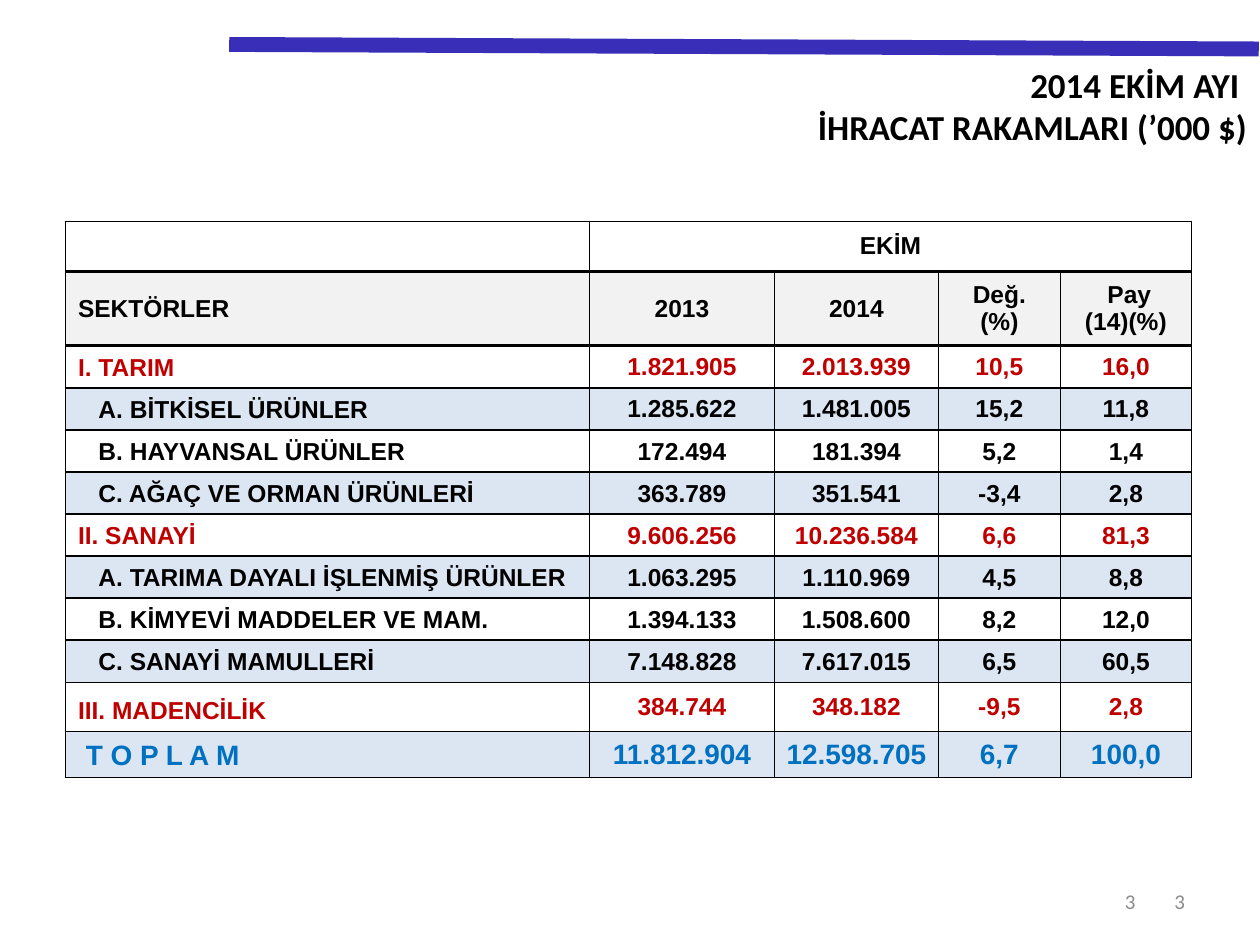
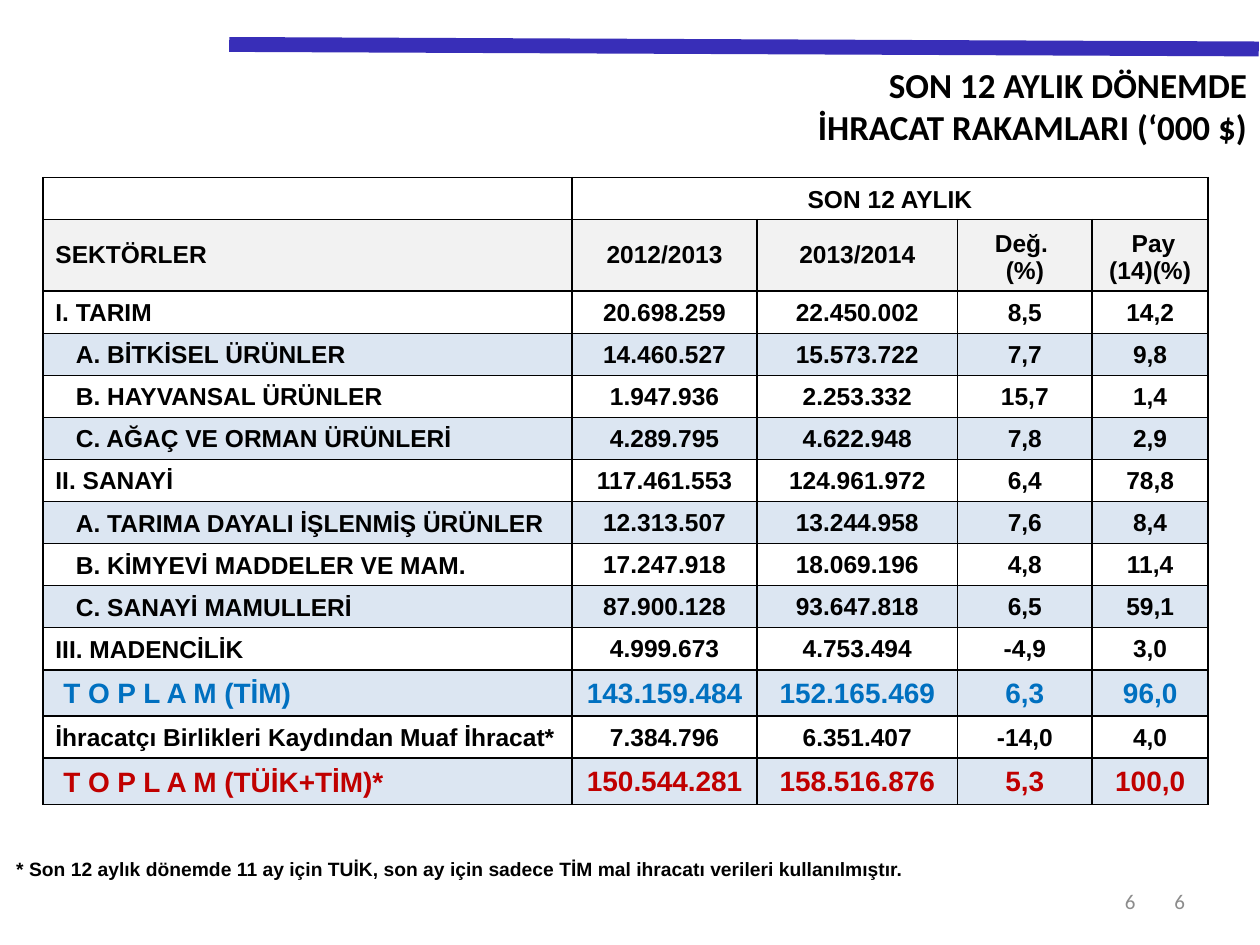
from dataclasses import dataclass

from lxml import etree
from pptx import Presentation
from pptx import util as u
from pptx.dml.color import RGBColor
from pptx.enum import shapes, text
from pptx.oxml import ns


@dataclass(frozen=True)
class Theme:
    black: str = "000000"
    red: str = "C00000"
    blue: str = "0070C0"
    grey: str = "8C8C8C"
    bar: str = "382EB8"
    header: str = "F2F2F2"
    band: str = "DCE6F2"
    heading_font: str = "Calibri"
    table_font: str = "Arial"
    title_size: int = 20
    total_size: int = 16
    table_size: int = 14
    number_size: int = 12
    note_size: int = 11


theme = Theme()
LEFT, CENTER, RIGHT = text.PP_ALIGN.LEFT, text.PP_ALIGN.CENTER, text.PP_ALIGN.RIGHT
TOP, MIDDLE, BOTTOM = text.MSO_ANCHOR.TOP, text.MSO_ANCHOR.MIDDLE, text.MSO_ANCHOR.BOTTOM


def write(frame, content, size=theme.table_size, font=theme.table_font,
          color=theme.black, bold=True, align=LEFT):
    for number, line in enumerate(content.split("\n")):
        paragraph = frame.add_paragraph() if number else frame.paragraphs[0]
        paragraph.alignment = align
        if not line:
            etree.SubElement(paragraph._p, ns.qn("a:endParaRPr"), sz=str(size * 100))
            continue
        run = paragraph.add_run()
        run.text = line
        run.font.size = u.Pt(size)
        run.font.name = font
        run.font.bold = bold
        run.font.color.rgb = RGBColor.from_string(color)


def draw_borders(cell, top, bottom):
    properties = cell._tc.get_or_add_tcPr()
    sides = (("a:lnL", 1), ("a:lnR", 1), ("a:lnT", top), ("a:lnB", bottom))
    for position, (side, width) in enumerate(sides):
        line = etree.Element(ns.qn(side), w=str(u.Pt(width)))
        fill = etree.SubElement(line, ns.qn("a:solidFill"))
        etree.SubElement(fill, ns.qn("a:srgbClr"), val=theme.black)
        properties.insert(position, line)


SECTORS = [
    "I. TARIM", "A. BİTKİSEL ÜRÜNLER", "B. HAYVANSAL ÜRÜNLER",
    "C. AĞAÇ VE ORMAN ÜRÜNLERİ", "II. SANAYİ",
    "A. TARIMA DAYALI İŞLENMİŞ ÜRÜNLER", "B. KİMYEVİ MADDELER VE MAM.",
    "C. SANAYİ MAMULLERİ", "III. MADENCİLİK",
]

PAGES = [
    dict(
        number="3",
        title="2014 EKİM AYI \nİHRACAT RAKAMLARI (’000 $)",
        period="EKİM",
        period_anchor=MIDDLE,
        header=["SEKTÖRLER", "2013", "2014", "Değ. (%)", " Pay\n(14)(%)"],
        header_anchor=MIDDLE,
        labels=SECTORS + ["T O P L A M"],
        values=[
            ["1.821.905", "2.013.939", "10,5", "16,0"],
            ["1.285.622", "1.481.005", "15,2", "11,8"],
            ["172.494", "181.394", "5,2", "1,4"],
            ["363.789", "351.541", "-3,4", "2,8"],
            ["9.606.256", "10.236.584", "6,6", "81,3"],
            ["1.063.295", "1.110.969", "4,5", "8,8"],
            ["1.394.133", "1.508.600", "8,2", "12,0"],
            ["7.148.828", "7.617.015", "6,5", "60,5"],
            ["384.744", "348.182", "-9,5", "2,8"],
            ["11.812.904", "12.598.705", "6,7", "100,0"],
        ],
        colors={2: theme.red, 6: theme.red, 10: theme.red, 11: theme.blue},
        left=37.4, top=126.5,
        widths=[299.5, 105.7, 93.7, 69.7, 75],
        heights=[28.5, 42.6] + [24] * 8 + [28, 26.3],
        heavy_edges={1: 2.25, 2: 2},
        note="",
    ),
    dict(
        number="6",
        title="SON 12 AYLIK DÖNEMDE\nİHRACAT RAKAMLARI (‘000 $)",
        period="SON 12 AYLIK",
        period_anchor=BOTTOM,
        header=["SEKTÖRLER", "2012/2013", "2013/2014", "Değ. \n(%)", " Pay\n(14)(%)"],
        header_anchor=BOTTOM,
        labels=SECTORS + ["T O P L A M (TİM)",
                          "İhracatçı Birlikleri Kaydından Muaf İhracat*",
                          "T O P L A M (TÜİK+TİM)*"],
        values=[
            ["20.698.259", "22.450.002", "8,5", "14,2"],
            ["14.460.527", "15.573.722", "7,7", "9,8"],
            ["1.947.936", "2.253.332", "15,7", "1,4"],
            ["4.289.795", "4.622.948", "7,8", "2,9"],
            ["117.461.553", "124.961.972", "6,4", "78,8"],
            ["12.313.507", "13.244.958", "7,6", "8,4"],
            ["17.247.918", "18.069.196", "4,8", "11,4"],
            ["87.900.128", "93.647.818", "6,5", "59,1"],
            ["4.999.673", "4.753.494", "-4,9", "3,0"],
            ["143.159.484", "152.165.469", "6,3", "96,0"],
            ["7.384.796", "6.351.407", "-14,0", "4,0"],
            ["150.544.281", "158.516.876", "5,3", "100,0"],
        ],
        colors={11: theme.blue, 13: theme.red},
        left=24.5, top=101.5,
        widths=[302.4, 105.8, 114.5, 77, 66.2],
        heights=[24, 40.7] + [24] * 9 + [26.3, 24, 26.3],
        heavy_edges={},
        note="* Son 12 aylık dönemde 11 ay için TUİK, son ay için sadece "
             "TİM mal ihracatı verileri kullanılmıştır.",
    ),
]

presentation = Presentation()
presentation.slide_width, presentation.slide_height = u.Pt(720), u.Pt(540)

for page in PAGES:
    slide = presentation.slides.add_slide(presentation.slide_layouts[5])

    bar = slide.shapes.add_connector(
        shapes.MSO_CONNECTOR.STRAIGHT, u.Pt(131), u.Pt(25.4), u.Pt(719.3), u.Pt(28))
    bar.line.width = u.Pt(8.5)
    bar.line.color.rgb = RGBColor.from_string(theme.bar)
    etree.SubElement(bar._element.spPr, ns.qn("a:effectLst"))

    for left, width in ((516.2, 168), (504.7, 151.2)):
        box = slide.shapes.add_textbox(u.Pt(left), u.Pt(500.5), u.Pt(width), u.Pt(28.8))
        box.text_frame.word_wrap = True
        box.text_frame.vertical_anchor = MIDDLE
        write(box.text_frame, page["number"], size=theme.number_size,
              font=theme.heading_font, color=theme.grey, bold=False, align=RIGHT)

    title = slide.shapes.title
    title.left, title.top, title.width, title.height = (
        u.Pt(76.3), u.Pt(32.4), u.Pt(643.7), u.Pt(56))
    title.text_frame.vertical_anchor = TOP
    title.text_frame.auto_size = text.MSO_AUTO_SIZE.NONE
    write(title.text_frame, page["title"], size=theme.title_size,
          font=theme.heading_font, align=RIGHT)

    rows = [["", page["period"], "", "", ""], page["header"]]
    rows += [[label] + values for label, values in zip(page["labels"], page["values"])]
    table = slide.shapes.add_table(
        len(rows), 5, u.Pt(page["left"]), u.Pt(page["top"]),
        u.Pt(sum(page["widths"])), u.Pt(sum(page["heights"]))).table
    table.first_row = table.horz_banding = False
    for column, width in zip(table.columns, page["widths"]):
        column.width = u.Pt(width)

    for row_index, row in enumerate(rows):
        table.rows[row_index].height = u.Pt(page["heights"][row_index])
        is_total = row[0].startswith("T O P")
        is_subsector = row[0].startswith(("A.", "B.", "C."))
        for column_index, content in enumerate(row):
            cell = table.cell(row_index, column_index)
            is_label = column_index == 0
            if row_index == 0:
                cell.vertical_anchor = page["period_anchor"]
            elif row_index == 1:
                cell.vertical_anchor = page["header_anchor"] if column_index > 2 else MIDDLE
            elif is_label:
                cell.vertical_anchor = BOTTOM
                cell.margin_left = u.Pt(18.9 if is_subsector else 11.7 if is_total else 7.2)
            else:
                cell.vertical_anchor = MIDDLE
                cell.margin_left = cell.margin_right = cell.margin_top = u.Pt(0.7)
                cell.margin_bottom = 0
            if row_index == 1 or row_index > 2 and row_index % 2:
                cell.fill.solid()
                cell.fill.fore_color.rgb = RGBColor.from_string(
                    theme.header if row_index == 1 else theme.band)
            else:
                cell.fill.background()
            draw_borders(cell, page["heavy_edges"].get(row_index, 1),
                         page["heavy_edges"].get(row_index + 1, 1))
            write(cell.text_frame, content,
                  size=theme.total_size if is_total else theme.table_size,
                  color=page["colors"].get(row_index, theme.black),
                  align=LEFT if is_label else CENTER)
    table.cell(0, 1).merge(table.cell(0, 4))

    if page["note"]:
        note_table = slide.shapes.add_table(
            2, 1, u.Pt(8.6), u.Pt(485.3), u.Pt(532.8), u.Pt(45)).table
        note_table.first_row = note_table.horz_banding = False
        for row_index, content in enumerate((page["note"], "")):
            cell = note_table.cell(row_index, 0)
            cell.fill.background()
            cell.vertical_anchor = MIDDLE
            cell.margin_left = cell.margin_right = cell.margin_top = u.Pt(0.7)
            cell.margin_bottom = 0
            write(cell.text_frame, content, size=theme.note_size)

presentation.save("out.pptx")
